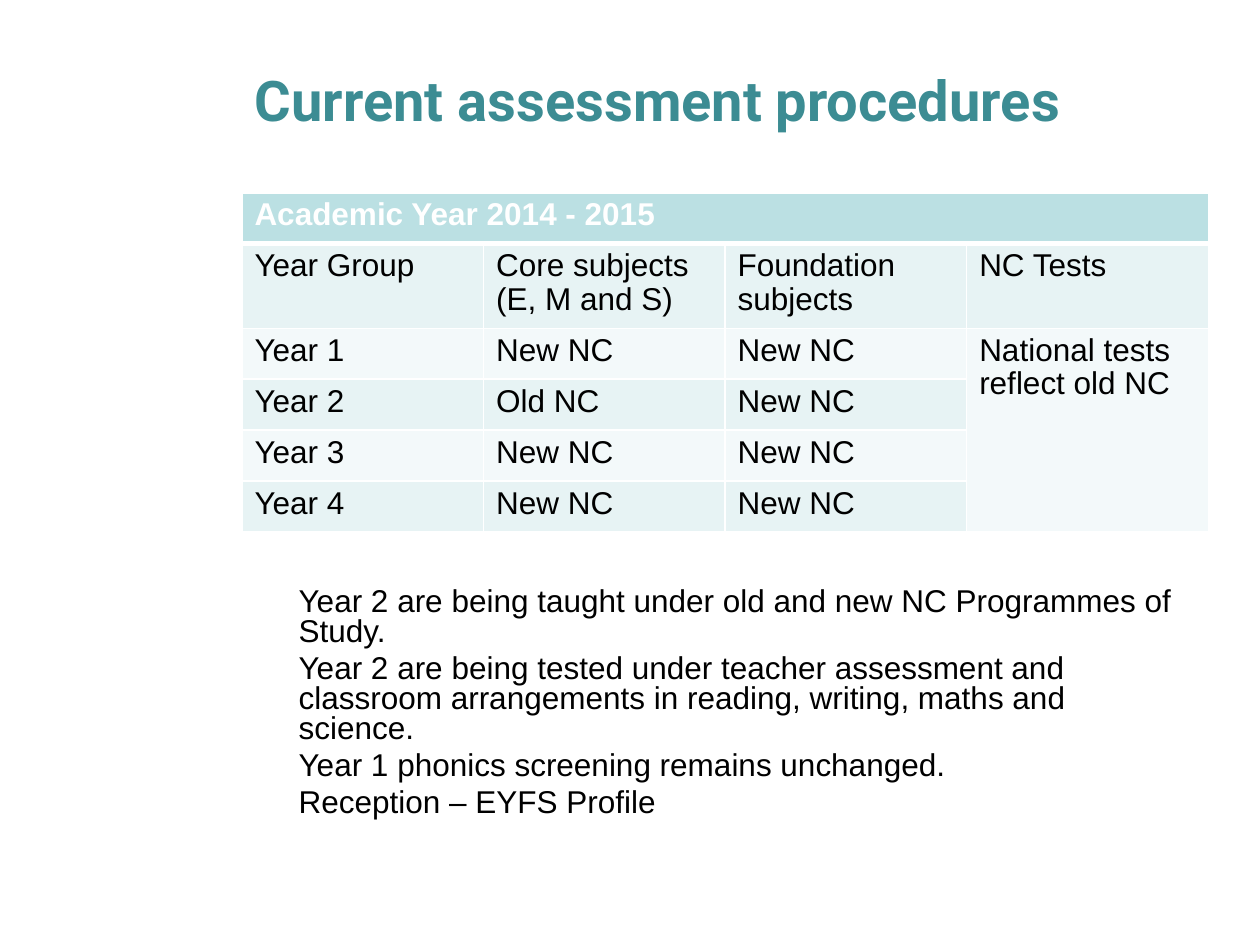
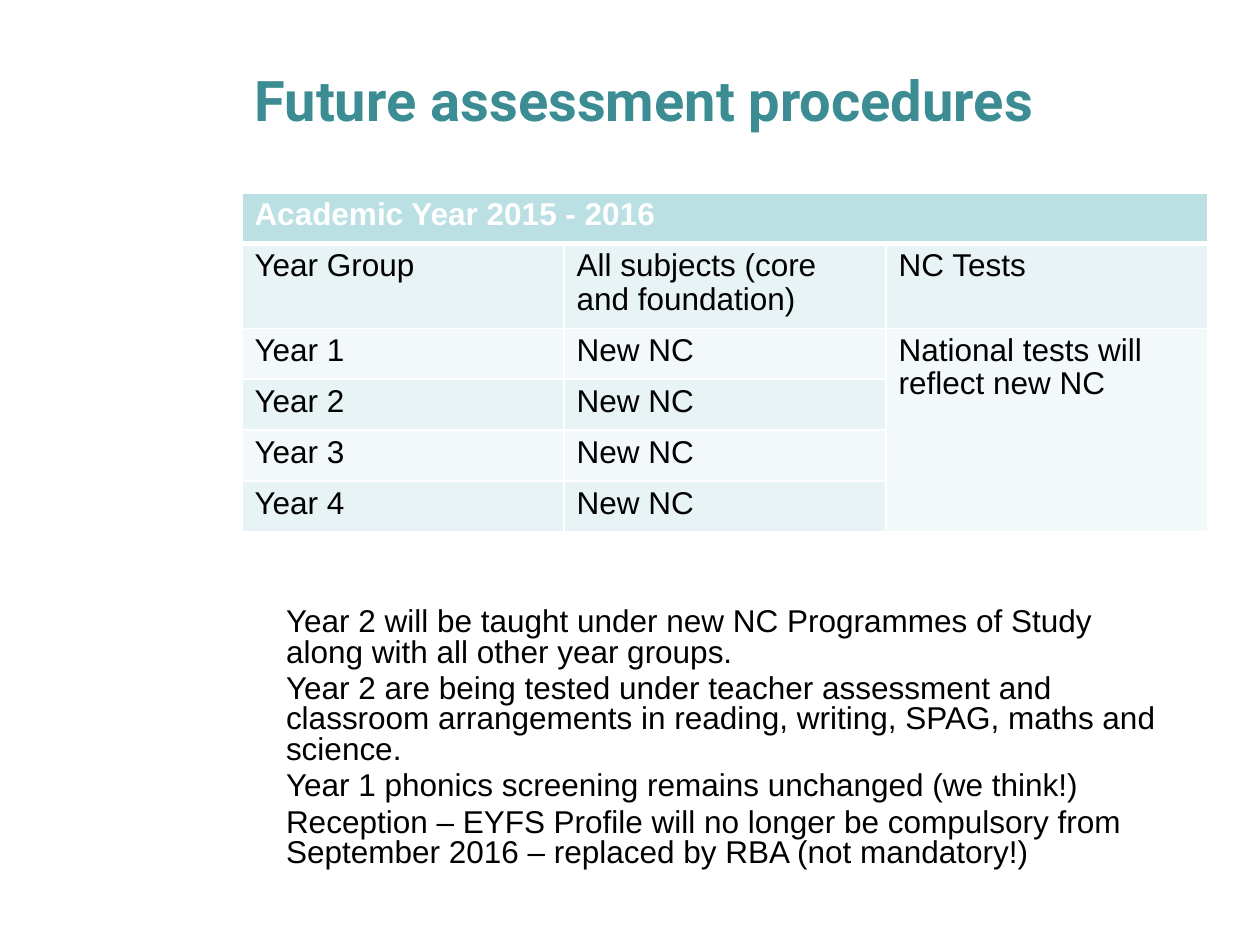
from lxml import etree
from pptx import Presentation
from pptx.dml.color import RGBColor
from pptx.enum import text
from pptx.oxml import ns
from pptx.util import Inches, Pt

TEAL = RGBColor(0x3C, 0x8C, 0x93)
HEADER_FILL = RGBColor(0xBB, 0xE0, 0xE3)
DARK_BAND = RGBColor(0xE7, 0xF3, 0xF4)
LIGHT_BAND = RGBColor(0xF3, 0xF9, 0xFA)
WHITE = RGBColor(0xFF, 0xFF, 0xFF)
BLACK = RGBColor(0, 0, 0)

LEFT, WIDTH = Inches(1.92), Inches(7.67)
TABLE_TOP, TABLE_HEIGHT = Inches(1.53), Inches(2.43)


class AssessmentDeck:
    title_font = "Roboto"
    body_font = "Arial"
    title_size = Pt(32)
    body_size = Pt(18)

    def __init__(self):
        self.presentation = Presentation()
        self.presentation.slide_width = Inches(10)
        self.presentation.slide_height = Inches(7.5)
        self.slide = None

    def add_slide(self, title):
        layout = self.presentation.slide_layouts[1]
        self.slide = self.presentation.slides.add_slide(layout)
        self.slide.background.fill.solid()
        self.slide.background.fill.fore_color.rgb = WHITE
        shape = self.slide.shapes.title
        self.place(shape, LEFT, Inches(0.33), WIDTH, Inches(0.92))
        frame = shape.text_frame
        frame.vertical_anchor = text.MSO_ANCHOR.MIDDLE
        frame.auto_size = text.MSO_AUTO_SIZE.NONE
        paragraph = frame.paragraphs[0]
        paragraph.alignment = text.PP_ALIGN.LEFT
        self.add_run(paragraph, title, TEAL, True, self.title_font, self.title_size)

    @staticmethod
    def place(shape, left, top, width, height):
        shape.left, shape.top, shape.width, shape.height = left, top, width, height

    def add_run(self, paragraph, words, color=BLACK, bold=False, font=None, size=None):
        run = paragraph.add_run()
        run.text = words
        run.font.name = font or self.body_font
        run.font.size = size or self.body_size
        run.font.bold = bold
        run.font.color.rgb = color

    def add_notes_list(self, items, left, top, width, height):
        """Fill the body placeholder with unbulleted paragraphs."""
        shape = self.slide.placeholders[1]
        self.place(shape, left, top, width, height)
        frame = shape.text_frame
        frame.word_wrap = True
        frame.vertical_anchor = text.MSO_ANCHOR.TOP
        frame.auto_size = text.MSO_AUTO_SIZE.SHAPE_TO_FIT_TEXT
        for index, item in enumerate(items):
            paragraph = frame.add_paragraph() if index else frame.paragraphs[0]
            properties = paragraph._p.get_or_add_pPr()
            properties.set("marL", "0")
            properties.set("indent", "0")
            etree.SubElement(properties, ns.qn("a:buNone"))
            paragraph.line_spacing = 0.8
            paragraph.space_before = Pt(3.6 if index else 0)
            self.add_run(paragraph, item)

    @staticmethod
    def add_borders(cell, top, bottom):
        properties = cell._tc.get_or_add_tcPr()
        for side, points in (("L", 1), ("R", 1), ("T", top), ("B", bottom)):
            line = etree.SubElement(properties, ns.qn(f"a:ln{side}"), w=str(Pt(points)))
            fill = etree.SubElement(line, ns.qn("a:solidFill"))
            etree.SubElement(fill, ns.qn("a:srgbClr"), val=str(WHITE))

    def add_year_table(self, heading, columns, years, tests):
        """Draw a heading row, column names, year rows and one tall tests cell."""
        rows = [[heading], columns, *years]
        rows[2] = [*rows[2], tests]
        last_row, last_column = len(rows) - 1, len(columns) - 1
        frame = self.slide.shapes.add_table(
            len(rows), len(columns), LEFT, TABLE_TOP, WIDTH, TABLE_HEIGHT)
        table = frame.table
        table.first_row = table.horz_banding = False
        for row_index, row in enumerate(rows):
            is_heading = row_index == 0
            band = DARK_BAND if row_index % 2 else LIGHT_BAND
            for column_index in range(len(columns)):
                cell = table.cell(row_index, column_index)
                self.add_borders(cell, 3 if row_index == 1 else 1, 3 if is_heading else 1)
                cell.fill.solid()
                cell.fill.fore_color.rgb = HEADER_FILL if is_heading else band
                if column_index < len(row):
                    paragraph = cell.text_frame.paragraphs[0]
                    paragraph.line_spacing = 0.95
                    self.add_run(paragraph, row[column_index],
                                 WHITE if is_heading else BLACK, is_heading)
        table.cell(0, 0).merge(table.cell(0, last_column))
        table.cell(2, last_column).merge(table.cell(last_row, last_column))


def main():
    deck = AssessmentDeck()

    deck.add_slide("Current assessment procedures")
    deck.add_year_table(
        "Academic Year 2014 - 2015",
        ["Year Group", "Core subjects (E, M and S)", "Foundation subjects", "NC Tests"],
        [[f"Year {year}", "Old NC" if year == 2 else "New NC", "New NC"]
         for year in range(1, 5)],
        "National tests reflect old NC")
    deck.add_notes_list([
        "Year 2 are being taught under old and new NC Programmes of Study.",
        "Year 2 are being tested under teacher assessment and classroom "
        "arrangements in reading, writing, maths and science.",
        "Year 1 phonics screening remains unchanged.",
        "Reception – EYFS Profile",
    ], Inches(2.27), Inches(4.62), Inches(7.19), Inches(1.98))

    deck.add_slide("Future assessment procedures")
    deck.add_year_table(
        "Academic Year 2015 - 2016",
        ["Year Group", "All subjects (core and foundation)", "NC Tests"],
        [[f"Year {year}", "New NC"] for year in range(1, 5)],
        "National tests will reflect new NC")
    deck.add_notes_list([
        "Year 2 will be taught under new NC Programmes of Study along with "
        "all other year groups.",
        "Year 2 are being tested under teacher assessment and classroom "
        "arrangements in reading, writing, SPAG, maths and science.",
        "Year 1 phonics screening remains unchanged (we think!)",
        "Reception – EYFS Profile will no longer be compulsory from "
        "September 2016 – replaced by RBA (not mandatory!)",
    ], Inches(2.17), Inches(4.78), Inches(7.27), Inches(2.22))

    deck.presentation.save("out.pptx")


if __name__ == "__main__":
    main()
